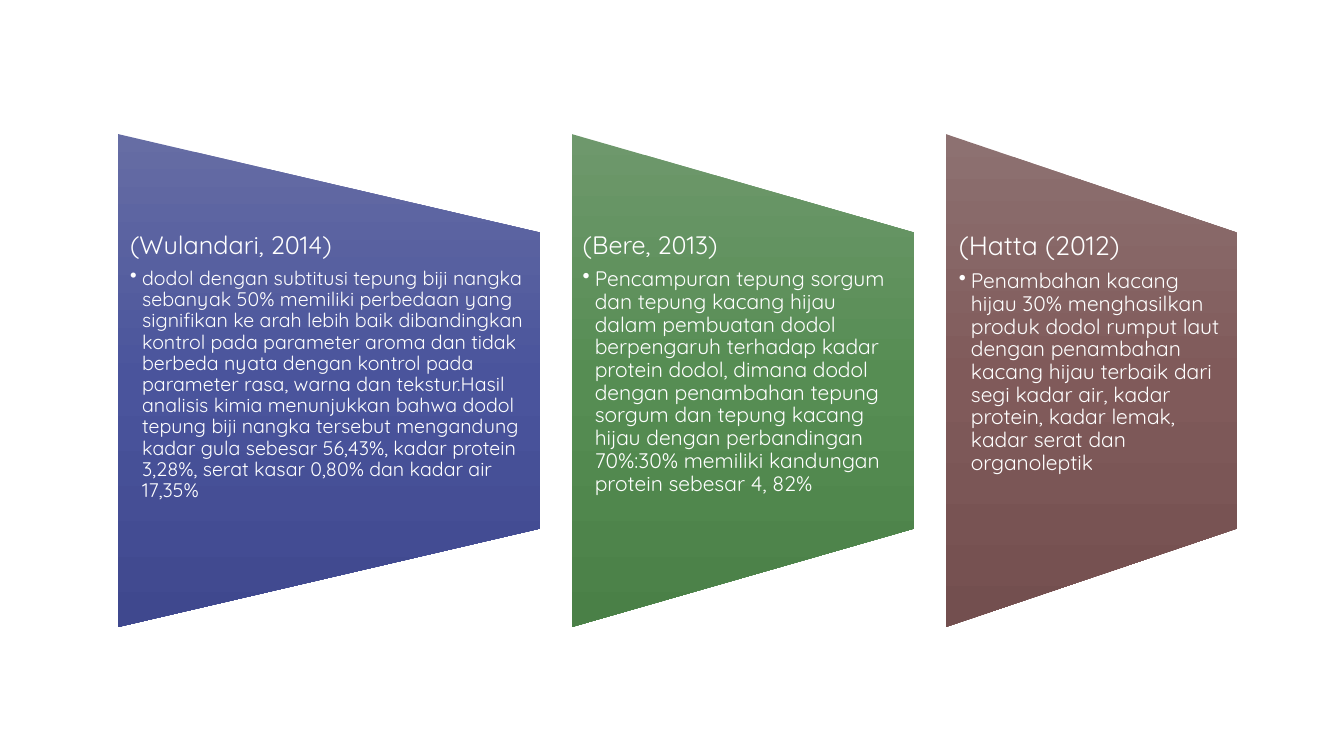
from copy import deepcopy

from lxml import etree
from pptx import Presentation
from pptx import util as u
from pptx.dml.color import RGBColor
from pptx.enum import shapes, text
from pptx.oxml.ns import qn

WHITE = RGBColor(0xFF, 0xFF, 0xFF)
BLUE = [RGBColor(0x66, 0x6D, 0xA4), RGBColor(0x4A, 0x54, 0x9C), RGBColor(0x3F, 0x48, 0x8E)]
GREEN = [RGBColor(0x6E, 0x98, 0x6C), RGBColor(0x56, 0x8D, 0x53), RGBColor(0x4A, 0x80, 0x47)]
BROWN = [RGBColor(0x8D, 0x71, 0x71), RGBColor(0x80, 0x5A, 0x5A), RGBColor(0x73, 0x4F, 0x4F)]

LEFT, TOP, TALL, GAP = 1.17, 1.33, 4.89, 0.31
FONT = "Quicksand"

# Panel width, side inset, colours, head and its size, body and its size
PANELS = [
    (4.19, 0.12, BLUE, "(Wulandari, 2014)", 18,
     "dodol dengan subtitusi tepung biji nangka sebanyak 50% memiliki perbedaan yang "
     "signifikan ke arah lebih baik dibandingkan kontrol pada parameter aroma dan tidak "
     "berbeda nyata dengan kontrol pada parameter rasa, warna dan tekstur.Hasil analisis "
     "kimia menunjukkan bahwa dodol tepung biji nangka tersebut mengandung kadar gula "
     "sebesar 56,43%, kadar protein 3,28%, serat kasar 0,80% dan kadar air 17,35%", 14),
    (3.4, 0.11, GREEN, "(Bere, 2013)", 18,
     "Pencampuran tepung sorgum dan tepung kacang hijau dalam pembuatan dodol berpengaruh "
     "terhadap kadar protein dodol, dimana dodol dengan penambahan tepung sorgum dan tepung "
     "kacang hijau dengan perbandingan 70%:30% memiliki kandungan protein sebesar 4, 82%", 15),
    (2.89, 0.13, BROWN, "(Hatta (2012)", 19,
     "Penambahan kacang hijau 30% menghasilkan produk dodol rumput laut dengan penambahan "
     "kacang hijau terbaik dari segi kadar air, kadar protein, kadar lemak, kadar serat dan "
     "organoleptik", 15),
]


def write(para, words, size, after, bullet=False):
    if bullet:
        para.level = 1
        props = para._p.get_or_add_pPr()
        props.set("marL", str(u.Inches(0.12)))
        props.set("indent", str(-u.Inches(0.12)))
        etree.SubElement(props, qn("a:buChar")).set("char", "•")
    para.alignment = text.PP_ALIGN.LEFT
    para.line_spacing = 0.9
    para.space_after = u.Pt(round(size * after, 1))
    run = para.add_run()
    run.text = words
    run.font.size = u.Pt(size)
    run.font.name = FONT
    run.font.color.rgb = WHITE


def shade(fill, shape, tones):
    """Give an upright three-stop gradient that ignores the shape's turn."""
    fill.gradient()
    fill.gradient_angle = 270
    grad = shape._element.spPr.find(qn("a:gradFill"))
    grad.set("rotWithShape", "0")
    stops = grad.find(qn("a:gsLst"))
    stops.insert(1, deepcopy(stops[0]))
    for i, (stop, tone) in enumerate(zip(fill.gradient_stops, tones)):
        stop.position = i / 2
        stop.color.rgb = tone


deck = Presentation()
deck.slide_width, deck.slide_height = u.Inches(13.33), u.Inches(7.5)
slide = deck.slides.add_slide(deck.slide_layouts[6])

left = LEFT
for wide, inset, tones, head, head_size, body, body_size in PANELS:
    # The shape lies on its side, so its width and height swap about its centre
    shift = (TALL - wide) / 2
    panel = slide.shapes.add_shape(
        shapes.MSO_SHAPE.FLOWCHART_MANUAL_OPERATION,
        u.Inches(left - shift), u.Inches(TOP + shift), u.Inches(TALL), u.Inches(wide))
    panel.rotation = 270
    panel.shadow.inherit = False
    panel.line.fill.background()
    shade(panel.fill, panel, tones)

    box = slide.shapes.add_textbox(
        u.Inches(left), u.Inches(TOP + TALL / 5), u.Inches(wide), u.Inches(TALL * 3 / 5))
    frame = box.text_frame
    frame.word_wrap = True
    frame.vertical_anchor = text.MSO_ANCHOR.TOP
    frame.margin_left = frame.margin_right = u.Inches(inset)
    frame.margin_top = frame.margin_bottom = 0
    write(frame.paragraphs[0], head, head_size, 0.35)
    write(frame.add_paragraph(), body, body_size, 0.15, bullet=True)
    left += wide + GAP

deck.save("out.pptx")
